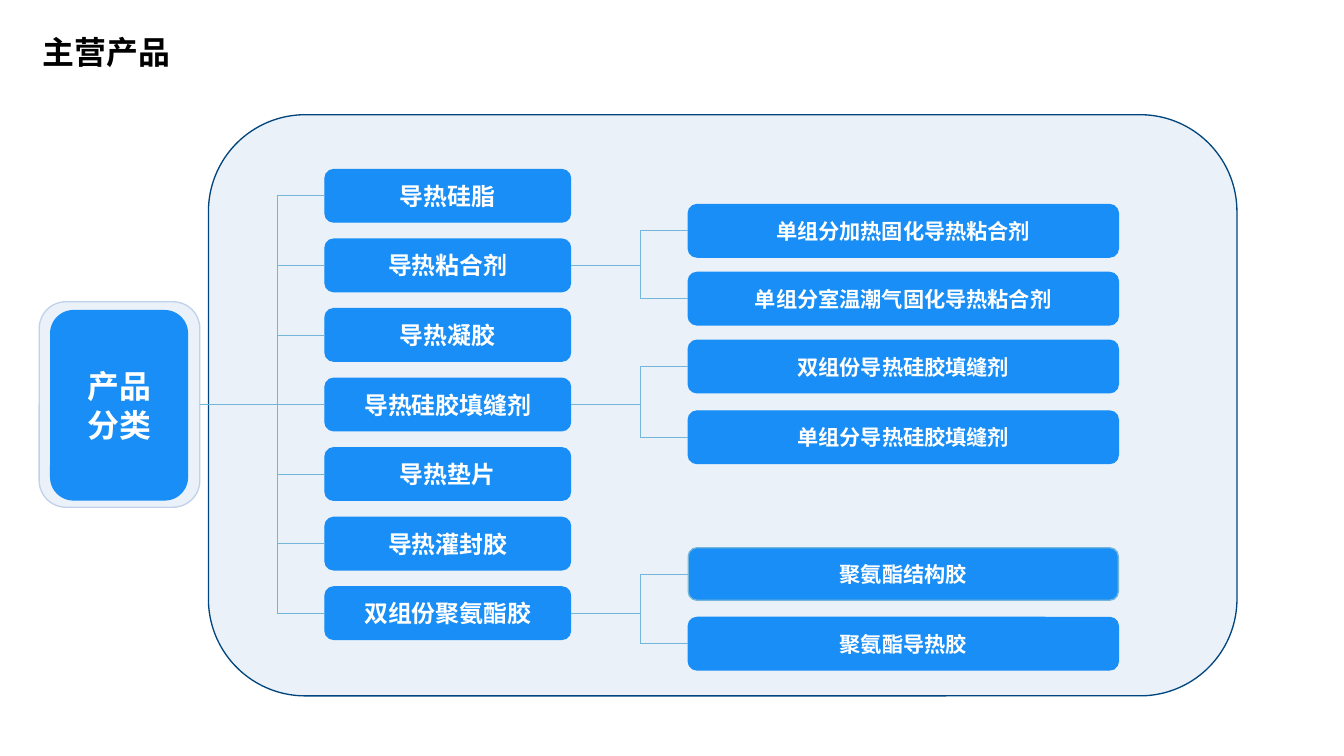
import pptx
import pptx.dml.color
import pptx.enum.shapes
import pptx.enum.text
import pptx.oxml.ns
import pptx.util
from lxml import etree

Pt = pptx.util.Pt
RGBColor = pptx.dml.color.RGBColor
Align = pptx.enum.text.PP_ALIGN
Anchor = pptx.enum.text.MSO_ANCHOR
qn = pptx.oxml.ns.qn

BLACK = RGBColor(0x00, 0x00, 0x00)
WHITE = RGBColor(0xFF, 0xFF, 0xFF)
BLUE = RGBColor(0x18, 0x8E, 0xF6)
PALE = RGBColor(0xEB, 0xF1, 0xF9)
NAVY = RGBColor(0x00, 0x45, 0x7D)
HALO_EDGE = RGBColor(0xC0, 0xD1, 0xEA)
BRANCH = RGBColor(0x73, 0xB6, 0xD9)
FONT = "Noto Sans CJK SC"

prs = pptx.Presentation()
prs.slide_width, prs.slide_height = Pt(1012.3), Pt(569.5)
slide = prs.slides.add_slide(prs.slide_layouts[6])


def add_block(text, left, top, width, height, *, size=18, color=WHITE,
              fill=BLUE, line=BLUE, align=Align.CENTER):
    """Rounded box with centred text, or a plain text box when fill is None."""
    bounds = Pt(left), Pt(top), Pt(width), Pt(height)
    if fill is None:
        block = slide.shapes.add_textbox(*bounds)
        block.text_frame.auto_size = pptx.enum.text.MSO_AUTO_SIZE.SHAPE_TO_FIT_TEXT
        block.text_frame.word_wrap = False
    else:
        block = slide.shapes.add_shape(
            pptx.enum.shapes.MSO_SHAPE.ROUNDED_RECTANGLE, *bounds)
        block.shadow.inherit = False
        block.fill.solid()
        block.fill.fore_color.rgb = fill
        block.line.color.rgb = line
        block.line.width = Pt(1)
        block.text_frame.vertical_anchor = Anchor.MIDDLE
    if text:
        block.text_frame.text = text
    for paragraph in block.text_frame.paragraphs:
        paragraph.alignment = align
        for run in paragraph.runs:
            run.font.size = Pt(size)
            run.font.bold = True
            run.font.name = FONT
            run.font.color.rgb = color
            etree.SubElement(run.font._element, qn("a:ea"), typeface=FONT)
    return block


def add_branch(x1, y1, x2, y2, source=None, target=None):
    """Thin line, joined to the right of source and the left of target."""
    branch = slide.shapes.add_connector(
        pptx.enum.shapes.MSO_CONNECTOR.STRAIGHT, Pt(x1), Pt(y1), Pt(x2), Pt(y2))
    branch.line.color.rgb = BRANCH
    branch.line.width = Pt(0.5)
    etree.SubElement(branch._element.spPr, qn("a:effectLst"))
    if source is not None:
        branch.begin_connect(source, 3)
    if target is not None:
        branch.end_connect(target, 1)


# Title and background panel
add_block("主营产品", 25.2, 20.9, 112.3, 36, size=24, color=BLACK,
          fill=None, align=Align.LEFT)
add_block("", 157, 86.4, 774.7, 437.8, fill=PALE, line=NAVY)

# Root card
halo = add_block("", 29.5, 227.3, 121, 154.8, fill=PALE, line=HALO_EDGE)
add_block("产品\n分类", 38.2, 234, 103, 142.6, size=24)

# Categories, each with its subcategories as (text, top, outline)
BOX_HEIGHT = 39.6
HALF = BOX_HEIGHT / 2
CATEGORY_LEFT, CATEGORY_WIDTH = 244.8, 185
CATEGORY_TOP, CATEGORY_STEP = 127.7, 52.4
SUB_LEFT, SUB_WIDTH = 518.4, 324
MAIN_TRUNK, SUB_TRUNK = 208.8, 482
categories = [
    ("导热硅脂", []),
    ("导热粘合剂", [("单组分加热固化导热粘合剂", 154.1, BLUE),
               ("单组分室温潮气固化导热粘合剂", 205.2, BLUE)]),
    ("导热凝胶", []),
    ("导热硅胶填缝剂", [("双组份导热硅胶填缝剂", 256.3, BLUE),
                 ("单组分导热硅胶填缝剂", 309.6, BLUE)]),
    ("导热垫片", []),
    ("导热灌封胶", []),
    ("双组份聚氨酯胶", [("聚氨酯结构胶", 412.6, BRANCH),
                 ("聚氨酯导热胶", 465.1, BLUE)]),
]

# Main trunk
first_middle = CATEGORY_TOP + HALF
last_middle = first_middle + CATEGORY_STEP * (len(categories) - 1)
root_middle = (first_middle + last_middle) / 2
add_branch(MAIN_TRUNK, first_middle, MAIN_TRUNK, last_middle)
add_branch(150.5, root_middle, MAIN_TRUNK, root_middle, source=halo)

# Category boxes with their branches
for row, (name, subcategories) in enumerate(categories):
    top = CATEGORY_TOP + CATEGORY_STEP * row
    middle = top + HALF
    category = add_block(name, CATEGORY_LEFT, top, CATEGORY_WIDTH, BOX_HEIGHT)
    add_branch(MAIN_TRUNK, middle, CATEGORY_LEFT, middle, target=category)
    if not subcategories:
        continue
    add_branch(CATEGORY_LEFT + CATEGORY_WIDTH, middle, SUB_TRUNK, middle,
               source=category)
    add_branch(SUB_TRUNK, subcategories[0][1] + HALF,
               SUB_TRUNK, subcategories[-1][1] + HALF)
    for sub_name, sub_top, outline in subcategories:
        subcategory = add_block(sub_name, SUB_LEFT, sub_top, SUB_WIDTH,
                                BOX_HEIGHT, size=16, line=outline)
        add_branch(SUB_TRUNK, sub_top + HALF, SUB_LEFT, sub_top + HALF,
                   target=subcategory)

prs.save("out.pptx")
